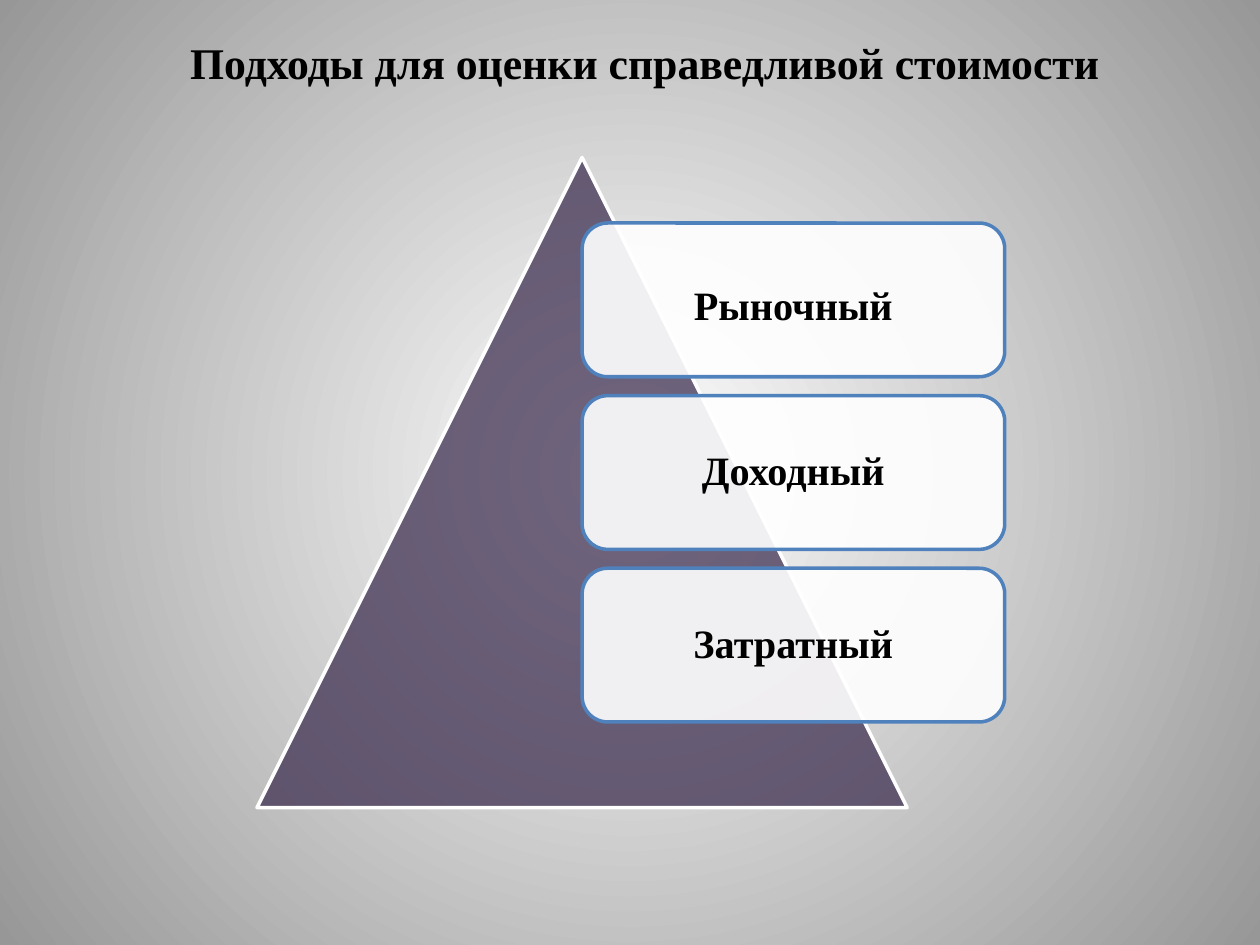
from dataclasses import dataclass

from pptx import Presentation
from pptx.dml.color import RGBColor as RGB
from pptx.enum.shapes import MSO_SHAPE as SHAPE
from pptx.enum.text import MSO_ANCHOR as ANCHOR, MSO_AUTO_SIZE as AUTO, PP_ALIGN as ALIGN
from pptx.oxml import parse_xml
from pptx.oxml.ns import nsdecls, qn
from pptx.oxml.xmlchemy import OxmlElement
from pptx.util import Inches, Pt


@dataclass(frozen=True)
class Theme:
    font: str = "Times New Roman"
    title_size: float = 25
    card_size: float = 23
    line_width: float = 2
    text: RGB = RGB(0, 0, 0)
    white: RGB = RGB(255, 255, 255)
    edge: RGB = RGB(0x97, 0x97, 0x97)
    pyramid: RGB = RGB(0x40, 0x31, 0x52)
    card_line: RGB = RGB(0x4F, 0x81, 0xBD)


THEME = Theme()
TITLE = "Подходы для оценки справедливой стоимости"
APPROACHES = ["Рыночный", "Доходный", "Затратный"]


def style_text(p, size):
    for r in p.runs:
        r.font.name = THEME.font
        r.font.size = Pt(size)
        r.font.bold = True
        r.font.color.rgb = THEME.text


def add_background(s):
    """Radial gradient, light in the centre."""
    fill = s.background.fill
    fill.gradient()
    for stop, color in zip(fill.gradient_stops, (THEME.white, THEME.edge)):
        stop.color.rgb = color
    lin = next(s.element.iter(qn("a:lin")))
    radial = parse_xml(
        f'<a:path {nsdecls("a")} path="circle">'
        '<a:fillToRect l="50000" t="50000" r="50000" b="50000"/></a:path>')
    lin.getparent().replace(lin, radial)


def add_title(s, left, top, width, height):
    sp = s.shapes.title
    sp.left, sp.top, sp.width, sp.height = map(Inches, (left, top, width, height))
    tf = sp.text_frame
    tf.text = TITLE
    tf.word_wrap = False
    tf.auto_size = AUTO.NONE
    tf.vertical_anchor = ANCHOR.TOP
    p = tf.paragraphs[0]
    p.alignment = ALIGN.LEFT
    style_text(p, THEME.title_size)


def add_panel(s, kind, box, color, opacity, line):
    """Shape with a translucent fill and a solid outline."""
    sp = s.shapes.add_shape(kind, *map(Inches, box))
    sp.shadow.inherit = False
    sp.fill.solid()
    sp.fill.fore_color.rgb = color
    alpha = OxmlElement("a:alpha")
    alpha.set("val", str(opacity * 1000))
    next(sp.element.spPr.iter(qn("a:srgbClr"))).append(alpha)
    sp.line.color.rgb = line
    sp.line.width = Pt(THEME.line_width)
    return sp


def add_cards(s, left, top, width, height, gap=0.15):
    """Equal cards stacked in the given box."""
    card_h = (height - gap * (len(APPROACHES) - 1)) / len(APPROACHES)
    for i, name in enumerate(APPROACHES):
        box = (left, top + i * (card_h + gap), width, card_h)
        sp = add_panel(s, SHAPE.ROUNDED_RECTANGLE, box, THEME.white, 90, THEME.card_line)
        tf = sp.text_frame
        tf.text = name
        tf.word_wrap = True
        tf.vertical_anchor = ANCHOR.MIDDLE
        # The first label sits slightly lower than the middle
        tf.margin_top = Inches(0.17 if i == 0 else 0.05)
        p = tf.paragraphs[0]
        p.alignment = ALIGN.CENTER
        p.line_spacing = 0.9
        style_text(p, THEME.card_size)


def add_pyramid_list(s, left, top, size):
    """Triangle with cards running from its vertical axis to the right."""
    add_panel(s, SHAPE.ISOSCELES_TRIANGLE, (left, top, size, size),
              THEME.pyramid, 75, THEME.white)
    add_cards(s, left + size / 2, top + 0.52, size * 0.65, 3.96)


def main():
    prs = Presentation()
    prs.slide_width, prs.slide_height = Inches(10), Inches(7.5)
    s = prs.slides.add_slide(prs.slide_layouts[5])
    add_background(s)
    add_title(s, 1.41, 0.23, 7.49, 0.94)
    add_pyramid_list(s, 2.04, 1.25, 5.16)
    prs.save("out.pptx")


if __name__ == "__main__":
    main()
